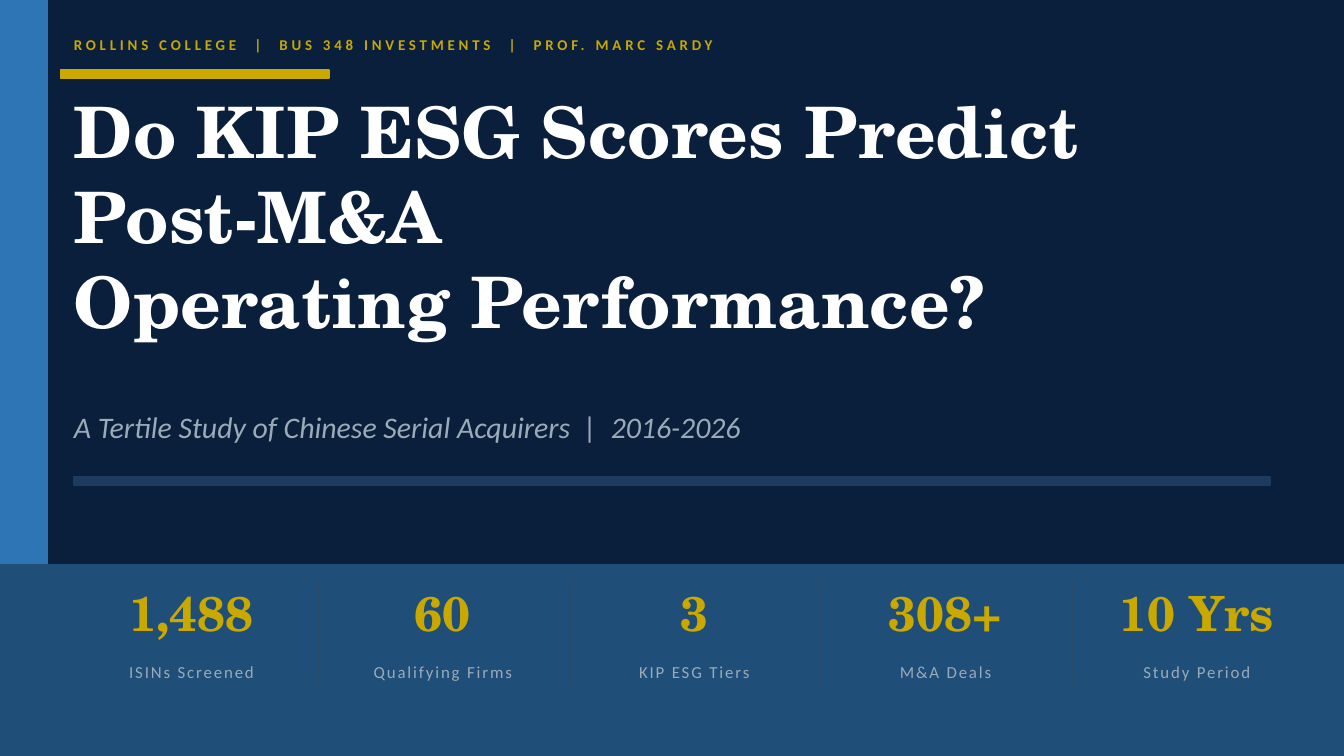
"""Build the title slide of an ESG and M&A performance study."""
from pptx import Presentation
from pptx.dml.color import RGBColor
from pptx.enum.shapes import MSO_CONNECTOR, MSO_SHAPE
from pptx.enum.text import MSO_ANCHOR as ANCHOR, MSO_AUTO_SIZE, PP_ALIGN as ALIGN
from pptx.oxml.ns import qn
from pptx.util import Inches, Pt
from lxml.etree import SubElement

NAVY = RGBColor(0x0A, 0x1F, 0x3C)
BLUE = RGBColor(0x2E, 0x75, 0xB6)
BAND = RGBColor(0x1F, 0x4E, 0x79)
GOLD = RGBColor(0xC9, 0xA8, 0x00)
RULE = RGBColor(0x1E, 0x3A, 0x5F)
DIVIDER = RGBColor(0x2A, 0x4A, 0x6A)
GREY = RGBColor(0x9A, 0xAB, 0xB8)
WHITE = RGBColor(0xFF, 0xFF, 0xFF)
SERIF, SANS = "TeX Gyre Schola", "Calibri"
WIDTH = 10
HEIGHT = WIDTH * 9 / 16

EYEBROW = dict(name=SANS, size=Pt(8), bold=True)
TITLE = dict(name=SERIF, size=Pt(38), bold=True)
SUBTITLE = dict(name=SANS, size=Pt(16), italic=True)
VALUE = dict(name=SERIF, size=Pt(26), bold=True)
LABEL = dict(name=SANS, size=Pt(9))


def fill_text(sp, lines, fmt, color, align=ALIGN.LEFT, anchor=ANCHOR.MIDDLE, spacing=0):
    tf = sp.text_frame
    frame = dict(word_wrap=True, auto_size=MSO_AUTO_SIZE.NONE, vertical_anchor=anchor,
                 margin_left=0, margin_top=0, margin_right=0, margin_bottom=0)
    for key, value in frame.items():
        setattr(tf, key, value)
    for i, line in enumerate(lines):
        p = tf.add_paragraph() if i else tf.paragraphs[0]
        p.alignment = align
        r = p.add_run()
        r.text = line
        for key, value in fmt.items():
            setattr(r.font, key, value)
        r.font.color.rgb = color
        if spacing:
            r.font._element.set("spc", str(spacing * 100))


def add_text(box, *args, **kwargs):
    fill_text(s.shapes.add_textbox(*map(Inches, box)), *args, **kwargs)


prs = Presentation()
prs.slide_width, prs.slide_height = Inches(WIDTH), Inches(HEIGHT)
s = prs.slides.add_slide(prs.slide_layouts[5])
s.background.fill.solid()
s.background.fill.fore_color.rgb = NAVY

bars = [
    ((0, 0, 0.35, HEIGHT), BLUE),
    ((0, 4.2, WIDTH, HEIGHT - 4.2), BAND),
    ((0.45, 0.52, 2, 0.06), GOLD),
    ((0.55, 3.55, 8.9, 0.06), RULE),
]
for box, color in bars:
    sp = s.shapes.add_shape(MSO_SHAPE.RECTANGLE, *map(Inches, box))
    sp.shadow.inherit = False
    sp.fill.solid()
    sp.fill.fore_color.rgb = color
    sp.line.color.rgb = color
    sp.line.width = Pt(1)

title = s.shapes.title
title.left, title.top, title.width, title.height = map(Inches, (0.55, 0.65, 8.8, 2.2))
fill_text(title, ["Do KIP ESG Scores Predict Post-M&A", "Operating Performance?"],
          TITLE, WHITE, anchor=ANCHOR.TOP)

add_text((0.55, 0.18, 9, 0.3),
         ["ROLLINS COLLEGE  |  BUS 348 INVESTMENTS  |  PROF. MARC SARDY"],
         EYEBROW, GOLD, spacing=2)
add_text((0.55, 2.95, 8.5, 0.45),
         ["A Tertile Study of Chinese Serial Acquirers  |  2016-2026"], SUBTITLE, GREY)

stats = [
    ("1,488", "ISINs Screened"),
    ("60", "Qualifying Firms"),
    ("3", "KIP ESG Tiers"),
    ("308+", "M&A Deals"),
    ("10 Yrs", "Study Period"),
]
for i, (value, label) in enumerate(stats):
    x = 0.55 + 1.87 * i
    add_text((x, 4.28, 1.75, 0.55), [value], VALUE, GOLD, ALIGN.CENTER)
    add_text((x, 4.85, 1.75, 0.3), [label], LABEL, GREY, ALIGN.CENTER, spacing=1)
    if i:
        line_x = Inches(x - 0.05)
        line = s.shapes.add_connector(MSO_CONNECTOR.STRAIGHT, line_x, Inches(4.32),
                                      line_x, Inches(5.1))
        line.line.color.rgb = DIVIDER
        line.line.width = Pt(1)
        SubElement(line._element.spPr, qn("a:effectLst"))

prs.save("out.pptx")
